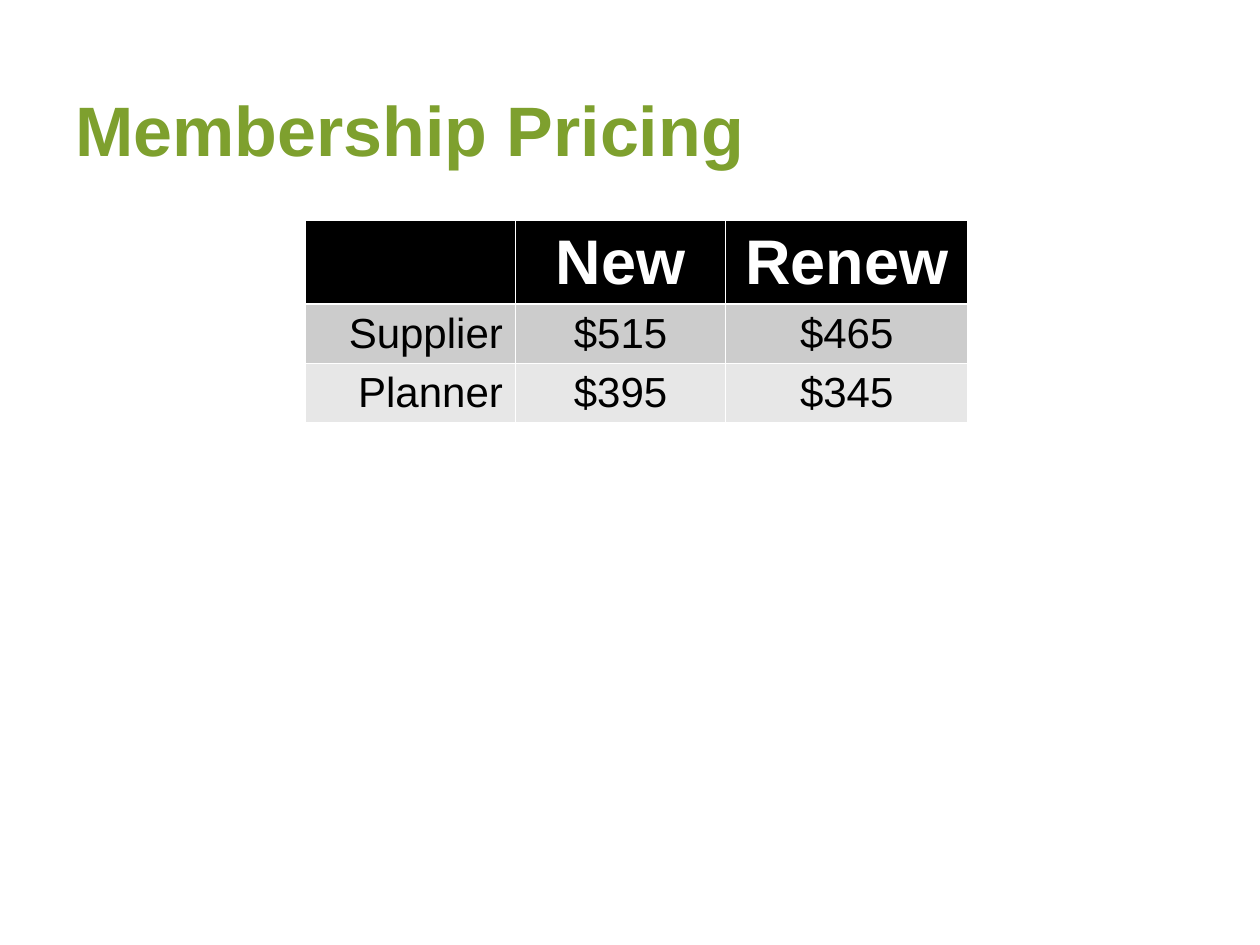
from pptx import Presentation
from pptx.dml.color import RGBColor
from pptx.enum.text import MSO_ANCHOR as Anchor, PP_ALIGN as Align
from pptx.util import Cm, Pt

PRICES = [
    ["", "New", "Renew"],
    ["Supplier", "$515", "$465"],
    ["Planner", "$395", "$345"],
]
COLUMN_WIDTHS = [4.24, 4.24, 4.88]
ROW_HEIGHT = 1.04
ROW_FILLS = ["000000", "CCCCCC", "E7E7E7"]


def color(value):
    """Turn a hex string into a colour."""
    return RGBColor.from_string(value)


def style_text(para, size, fill, bold, align):
    """Format a paragraph and its runs."""
    para.alignment = align
    for span in para.runs:
        span.font.name = "Arial"
        span.font.size = Pt(size)
        span.font.bold = bold
        span.font.color.rgb = color(fill)


def set_title(page, text):
    """Place and format the title placeholder."""
    title = page.shapes.title
    title.left, title.top = Cm(1.27), Cm(1.47)
    title.width, title.height = Cm(21.59), Cm(2.54)
    frame = title.text_frame
    frame.text = text
    frame.vertical_anchor = Anchor.TOP
    frame.margin_top = Cm(0.28)
    style_text(frame.paragraphs[0], 40, "7EA02E", True, Align.LEFT)


def fill_cell(cell, text, fill, is_header, is_label):
    """Write one table cell with its fill and text format."""
    cell.fill.solid()
    cell.fill.fore_color.rgb = color(fill)
    cell.text_frame.text = text
    size, text_color = (36, "FFFFFF") if is_header else (24, "000000")
    align = Align.RIGHT if is_label else Align.CENTER
    style_text(cell.text_frame.paragraphs[0], size, text_color, is_header, align)


def add_price_table(page):
    """Add the table of membership prices."""
    rows, columns = len(PRICES), len(COLUMN_WIDTHS)
    table = page.shapes.add_table(
        rows, columns, Cm(6.15), Cm(4.45),
        Cm(sum(COLUMN_WIDTHS)), Cm(rows * ROW_HEIGHT),
    ).table
    for column, width in zip(table.columns, COLUMN_WIDTHS):
        column.width = Cm(width)
    for r, (texts, fill) in enumerate(zip(PRICES, ROW_FILLS)):
        table.rows[r].height = Cm(ROW_HEIGHT)
        for c, text in enumerate(texts):
            fill_cell(table.cell(r, c), text, fill, r == 0, c == 0)


def main():
    """Build the pricing slide."""
    deck = Presentation()
    deck.slide_width, deck.slide_height = Cm(25.4), Cm(19.05)
    page = deck.slides.add_slide(deck.slide_layouts[5])
    set_title(page, "Membership Pricing")
    add_price_table(page)
    deck.save("out.pptx")


if __name__ == "__main__":
    main()
